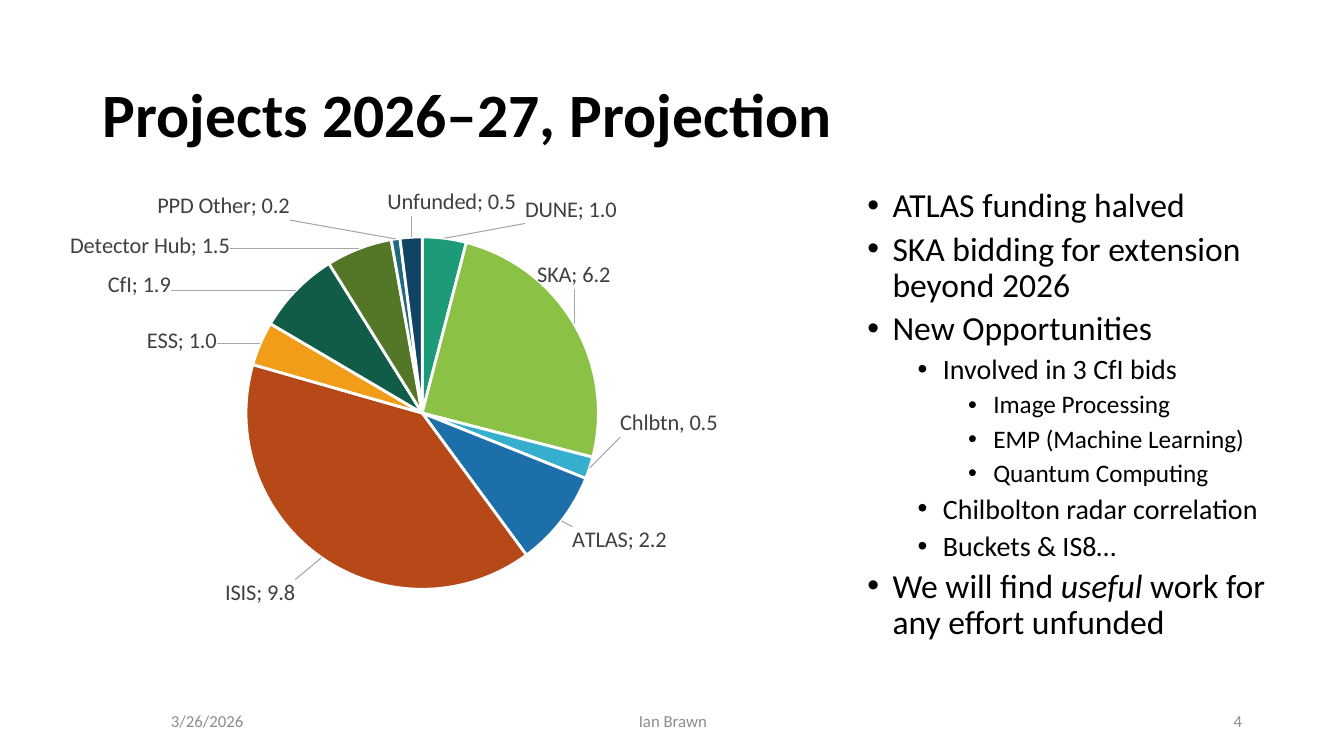
from pptx import Presentation
from pptx.chart.data import CategoryChartData
from pptx.dml.color import RGBColor
from pptx.enum.chart import XL_CHART_TYPE, XL_LABEL_POSITION
from pptx.enum.text import MSO_ANCHOR, PP_ALIGN
from pptx.oxml import parse_xml
from pptx.oxml.ns import nsdecls
from pptx.util import Emu, Pt

SCALE = 12192000 / 1344
HUES = {
    "ink": "000000", "label": "404040", "foot": "8C8C8C", "edge": "FFFFFF", "lead": "A6A6A6",
    "DUNE": "1D9A78", "SKA": "8BC145", "Chlbtn": "36AFCE", "ATLAS": "1D6FA9",
    "ISIS": "B74919", "ESS": "F19D19", "CfI": "115C48", "Detector Hub": "547627",
    "PPD Other": "1F6A7D", "Unfunded": "114365",
}
SHARES = [
    ("DUNE", 1.0, 80, -9), ("SKA", 6.2, -42, -32), ("Chlbtn", 0.5, 25, -60),
    ("ATLAS", 2.2, 6, 2), ("ISIS", 9.8, -23, 17), ("ESS", 1.0, -38, 14),
    ("CfI", 1.9, -121, 13), ("Detector Hub", 1.5, -127, 17),
    ("PPD Other", 0.2, -105, -13), ("Unfunded", 0.5, 41, -15),
]
POINTS = [
    (1, ["ATLAS funding halved"]),
    (1, ["SKA bidding for extension beyond 2026"]),
    (1, ["New Opportunities"]),
    (2, ["Involved in 3 CfI bids"]),
    (3, ["Image Processing"]),
    (3, ["EMP (Machine Learning)"]),
    (3, ["Quantum Computing"]),
    (2, ["Chilbolton radar correlation"]),
    (2, ["Buckets & IS8…"]),
    (1, ["We will find ", "useful", " work for any effort unfunded"]),
]
SIZES = {1: 24, 2: 20, 3: 18}


def px(count):
    return Emu(round(count * SCALE))


def tint(name):
    return RGBColor.from_string(HUES[name])


def layout(**parts):
    body = "".join(f'<c:{key} val="{val}"/>' for key, val in parts.items())
    return parse_xml(f'<c:layout {nsdecls("c")}><c:manualLayout>{body}</c:manualLayout></c:layout>')


class Deck:
    """Holds the style and the current slide, and draws each kind of element."""

    def __init__(self, face):
        self.face = face
        self.show = Presentation()
        self.show.slide_width, self.show.slide_height = px(1344), px(756)
        self.slide = self.show.slides.add_slide(self.show.slide_layouts[6])

    def style(self, font, size, hue, bold=False):
        font.name, font.size, font.bold = self.face, Pt(size), bold
        font.color.rgb = tint(hue)

    def frame(self, spot, anchor):
        frame = self.slide.shapes.add_textbox(*map(px, spot)).text_frame
        frame.word_wrap = True
        frame.vertical_anchor = anchor
        return frame

    def line(self, spot, text, size, hue, align=PP_ALIGN.LEFT, bold=False):
        para = self.frame(spot, MSO_ANCHOR.MIDDLE).paragraphs[0]
        para.text, para.alignment = text, align
        self.style(para.font, size, hue, bold)

    def bullets(self, spot, points):
        frame = self.frame(spot, MSO_ANCHOR.TOP)
        for rank, (level, parts) in enumerate(points):
            para = frame.add_paragraph() if rank else frame.paragraphs[0]
            para.level = level
            para.line_spacing = 0.9
            para.space_before = Pt(5 if rank else 0)
            props = para._p.get_or_add_pPr()
            props.set("marL", str(228600 + 457200 * level))
            props.set("indent", "-228600")
            props.append(parse_xml(f'<a:buFont {nsdecls("a")} typeface="Arial"/>'))
            props.append(parse_xml(f'<a:buChar {nsdecls("a")} char="•"/>'))
            self.style(para.font, SIZES[level], "ink")
            for turn, text in enumerate(parts):
                run = para.add_run()
                run.text = text
                if turn == 1:
                    run.font.italic = True

    def pie(self, spot, shares, custom):
        data = CategoryChartData(number_format="0.0")
        data.categories = [share[0] for share in shares]
        data.add_series("Series 1", [share[1] for share in shares])
        chart = self.slide.shapes.add_chart(XL_CHART_TYPE.PIE, *map(px, spot), data).chart
        chart.has_legend = chart.has_title = False
        self.style(chart.font, 16, "ink")
        area = chart._chartSpace.xpath("c:chart/c:plotArea")[0]
        for old in area.xpath("c:layout"):
            area.remove(old)
        area.insert(0, layout(layoutTarget="inner", xMode="edge", yMode="edge",
                              x=0.091, y=0.116, w=0.821, h=0.773))
        chart.plots[0].vary_by_categories = True
        series = chart.plots[0].series[0]
        labels = series.data_labels
        labels.show_value = labels.show_category_name = True
        labels.number_format, labels.number_format_is_linked = "0.0", False
        labels.position = XL_LABEL_POSITION.BEST_FIT
        self.style(labels.font, 16, "label")
        for rank, (name, _, right, down) in enumerate(shares):
            point = series.points[rank]
            point.format.fill.solid()
            point.format.fill.fore_color.rgb = tint(name)
            point.format.line.color.rgb = tint("edge")
            point.format.line.width = Pt(2)
            label = point.data_label
            if name in custom:
                para = label.text_frame.paragraphs[0]
                run = para.add_run()
                run.text = custom[name]
                self.style(run.font, 16, "label")
            else:
                self.style(label.font, 16, "label")
            label.position = XL_LABEL_POSITION.BEST_FIT
            node = series._element.xpath(f"c:dLbls/c:dLbl[c:idx/@val='{rank}']")[0]
            node.insert(1, layout(x=round(right / spot[2], 4), y=round(down / spot[3], 4)))
            node.xpath("c:showCatName")[0].set("val", "1")
            node.append(parse_xml(f'<c:separator {nsdecls("c")}>; </c:separator>'))
        group = series._element.xpath("c:dLbls")[0]
        for old in group.xpath("c:showLeaderLines"):
            group.remove(old)
        group.append(parse_xml(f'<c:separator {nsdecls("c")}>; </c:separator>'))
        group.append(parse_xml(f'<c:showLeaderLines {nsdecls("c")} val="1"/>'))
        group.append(parse_xml(
            f'<c:leaderLines {nsdecls("c", "a")}><c:spPr><a:ln w="9525"><a:solidFill>'
            f'<a:srgbClr val="{HUES["lead"]}"/></a:solidFill></a:ln></c:spPr></c:leaderLines>'))


def main():
    deck = Deck("Calibri")
    deck.line((93, 40, 1159, 146), "Projects 2026–27, Projection", 44, "ink", bold=True)
    deck.bullets((807, 184, 515, 506), POINTS)
    deck.line((161, 701, 234, 40), "3/26/2026", 12, "foot")
    deck.line((446, 701, 454, 40), "Ian Brawn", 12, "foot", PP_ALIGN.CENTER)
    deck.line((950, 701, 302, 40), "4", 12, "foot", PP_ALIGN.RIGHT)
    deck.pie((5, 184, 832, 456), SHARES, {"Chlbtn": "Chlbtn, 0.5"})
    deck.show.save("out.pptx")


if __name__ == "__main__":
    main()
